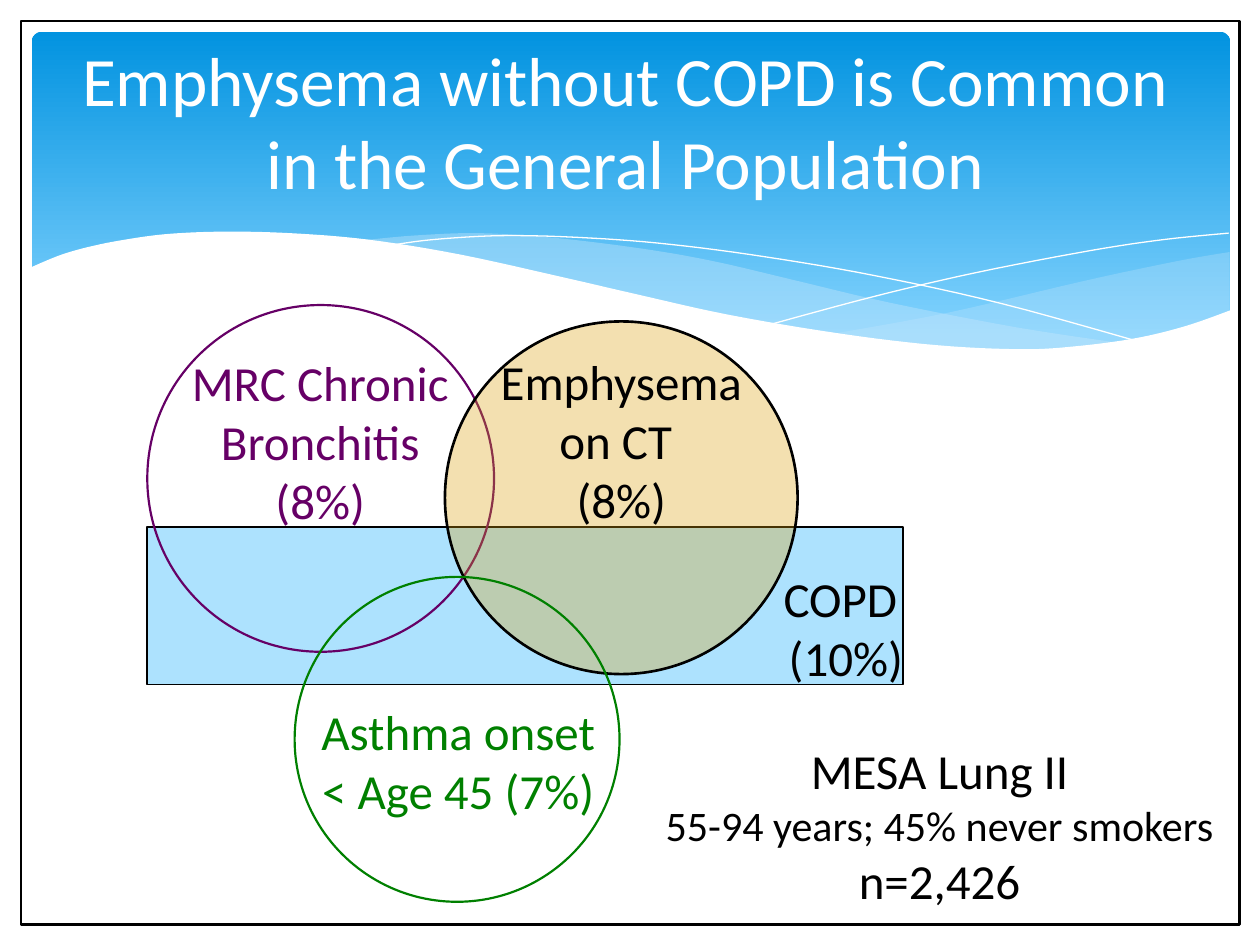
"""Build the slide on emphysema, COPD, chronic bronchitis and asthma overlap."""
import pptx
import pptx.util
import pptx.dml.color
import pptx.enum.shapes
import pptx.enum.text
import pptx.oxml.ns
import lxml.etree

Cm = pptx.util.Cm
Pt = pptx.util.Pt
RGB = pptx.dml.color.RGBColor.from_string
SHAPE = pptx.enum.shapes.MSO_SHAPE
ALIGN = pptx.enum.text.PP_ALIGN
THEME = {
    "font": "Calibri", "title": 39.6, "label": 28, "detail": 24,
    "white": "FFFFFF", "black": "000000", "purple": "660066", "green": "008000",
    "amber": "DC9F0C", "sky": "ADE2FE", "veil": "C6E7FC",
    "band top": "0293E0", "band bottom": "83D3FE",
}


def paint(shape, fill=None, alpha=None, line=None, width=0):
    """Set the fill, opacity and outline of a shape."""
    shape.shadow.inherit = False
    if fill:
        shape.fill.solid()
        shape.fill.fore_color.rgb = RGB(THEME[fill])
    else:
        shape.fill.background()
    if alpha:
        color = shape.fill._xPr.find(".//" + pptx.oxml.ns.qn("a:srgbClr"))
        lxml.etree.SubElement(color, pptx.oxml.ns.qn("a:alpha"), val=str(alpha * 1000))
    if line:
        shape.line.color.rgb = RGB(THEME[line])
        shape.line.width = Pt(width)
    else:
        shape.line.fill.background()


def smooth(knots, steps=6):
    """Return points on a Catmull-Rom curve through the knots."""
    padded = [knots[0], *knots, knots[-1]]
    points = [knots[0]]
    for a, b, c, d in zip(padded, padded[1:], padded[2:], padded[3:]):
        for step in range(1, steps + 1):
            t = step / steps
            points.append(tuple(
                (2 * q + (r - p) * t + (2 * p - 5 * q + 4 * r - s) * t**2
                 + (3 * q - p - 3 * r + s) * t**3) / 2
                for p, q, r, s in zip(a, b, c, d)))
    return points


deck = pptx.Presentation()
deck.slide_width, deck.slide_height = Cm(25.4), Cm(19.05)
slide = deck.slides.add_slide(deck.slide_layouts[5])
shapes = slide.shapes

band = shapes.add_shape(SHAPE.ROUNDED_RECTANGLE, Cm(0.64), Cm(0.64), Cm(24.16), Cm(6.86))
band.adjustments[0] = 0.03
paint(band)
band.fill.gradient()
band.fill.gradient_angle = 270
for stop, color, position in zip(band.fill.gradient_stops, ("band top", "band bottom"), (0, 0.9)):
    stop.color.rgb = RGB(THEME[color])
    stop.position = position

right_veil = (
    smooth([(24.79, 5.08), (23.75, 5.26), (21.87, 5.66), (19.13, 6.3), (16.79, 6.73)])
    + smooth([(16.79, 6.73), (18.26, 6.91), (19.53, 7.04), (20.68, 7.06), (21.69, 7.01),
              (23.19, 6.78), (24.1, 6.53), (24.79, 6.27)]))
middle_veil = (
    smooth([(22.68, 6.93), (20.5, 6.6), (17.93, 6.1), (15.98, 5.64), (14.45, 5.28),
            (13.06, 5.03), (11.23, 4.8), (9.65, 4.7), (8.33, 4.75), (7.26, 4.85)])
    + smooth([(7.26, 4.85), (8.69, 5.05), (10.26, 5.36), (12.47, 5.89), (14.38, 6.3),
              (16.1, 6.63), (17.65, 6.86), (19, 7.01), (20.5, 7.06), (21.77, 7.04),
              (22.68, 6.93)]))
falling_line = smooth([(7.85, 4.95), (8.74, 4.83), (10.19, 4.75), (11.91, 4.8), (13.54, 4.93),
                       (15.44, 5.18), (17.65, 5.56), (20.19, 6.12), (23.04, 6.91)])
rising_line = smooth([(15.57, 6.53), (17.65, 5.97), (19.71, 5.49), (22, 5.05),
                      (23.47, 4.83), (24.77, 4.7)])
white_wave = smooth([
    (24.82, 6.25), (23.88, 6.58), (22.83, 6.83), (21.59, 6.99), (20.55, 7.04), (18.9, 6.96),
    (16.97, 6.73), (14.71, 6.35), (12.78, 5.92), (11.35, 5.59), (9.27, 5.13), (7.42, 4.83),
    (5.84, 4.7), (4.5, 4.67), (3.35, 4.72), (2.41, 4.85), (1.7, 5), (1.17, 5.16), (0.58, 5.41),
]) + [(0.58, 8.36), (24.82, 8.36)]

for points, closed, look in (
    (right_veil, True, {"fill": "veil", "alpha": 29}),
    (middle_veil, True, {"fill": "veil", "alpha": 40}),
    (falling_line, False, {"line": "white"}),
    (rising_line, False, {"line": "white"}),
    (white_wave, True, {"fill": "white"}),
):
    corners = [(Cm(x), Cm(y)) for x, y in points]
    builder = shapes.build_freeform(*corners[0])
    builder.add_line_segments(corners[1:], close=closed)
    paint(builder.convert_to_shape(), **look)

title = shapes.title
shapes._spTree.append(title._element)
for name, value in {"left": Cm(0.64), "top": Cm(0.84),
                    "width": Cm(23.93), "height": Cm(3.18)}.items():
    setattr(title, name, value)

for kind, place, look in (
    (SHAPE.RECTANGLE, (2.97, 10.62, 15.24, 3.18), {"fill": "sky", "line": "black", "width": 1}),
    (SHAPE.OVAL, (2.97, 6.15, 6.99, 6.99), {"line": "purple", "width": 1.25}),
    (SHAPE.OVAL, (8.97, 6.48, 7.11, 7.11),
     {"fill": "amber", "alpha": 32, "line": "black", "width": 1.5}),
    (SHAPE.OVAL, (5.94, 11.63, 6.55, 6.55), {"line": "green", "width": 1.25}),
    (SHAPE.RECTANGLE, (0.43, 0.43, 24.56, 18.21), {"line": "black", "width": 1.25}),
):
    paint(shapes.add_shape(kind, *map(Cm, place)), **look)

texts = [(title, "white", [("Emphysema without COPD is Common\vin the General Population", "title")])]
for place, color, lines in (
    ((9.73, 6.96, 5.59, 3.84), "black", [("Emphysema on CT ", "label"), ("(8%)", "label")]),
    ((6.2, 14.02, 6.07, 2.64), "green", [("Asthma onset < Age 45 (7%)", "label")]),
    ((3.38, 6.99, 6.15, 3.84), "purple", [("MRC Chronic Bronchitis (8%)", "label")]),
    ((13.13, 11.33, 7.62, 2.64), "black", [("COPD", "label"), (" (10%)", "label")]),
    ((12.27, 14.81, 13.34, 3.68), "black",
     [("MESA Lung II", "label"), ("55-94 years; 45% never smokers", "detail"),
      ("n=2,426", "label")]),
):
    texts.append((shapes.add_textbox(*map(Cm, place)), color, lines))

for box, color, lines in texts:
    frame = box.text_frame
    frame.word_wrap = True
    frame.auto_size = pptx.enum.text.MSO_AUTO_SIZE.NONE
    for index, (wording, size) in enumerate(lines):
        para = frame.add_paragraph() if index else frame.paragraphs[0]
        para.text = wording
        para.alignment = ALIGN.CENTER
        for span in para.runs:
            for name, value in {"name": THEME["font"], "size": Pt(THEME[size])}.items():
                setattr(span.font, name, value)
            span.font.color.rgb = RGB(THEME[color])
title.text_frame.vertical_anchor = pptx.enum.text.MSO_ANCHOR.MIDDLE

deck.save("out.pptx")
